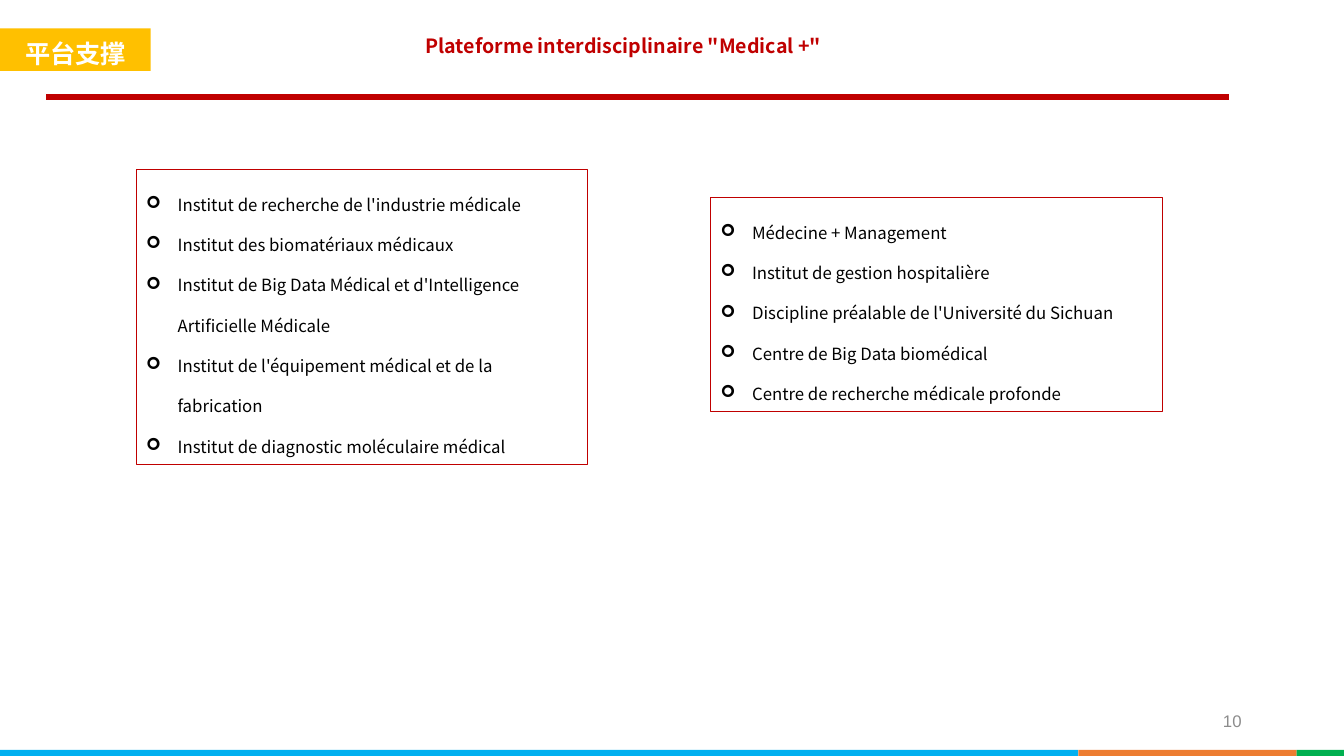
"""Build the slide on the "Medical +" interdisciplinary platform."""
from lxml import etree
from pptx import Presentation
from pptx.dml.color import RGBColor
from pptx.enum import shapes, text
from pptx.oxml.ns import qn
from pptx.util import Pt

SANS = "Noto Sans CJK SC"
RED = "C00000"


def paint(color_format, color):
    color_format.rgb = RGBColor.from_string(color)


def style(paragraph, size, color, bold=False, name=SANS):
    font = paragraph.font
    font.size, font.bold, font.name = Pt(size), bold, name
    paint(font.color, color)
    etree.SubElement(font._element, qn("a:ea"), typeface=name)


deck = Presentation()
deck.slide_width, deck.slide_height = Pt(960), Pt(540)
slide = deck.slides.add_slide(deck.slide_layouts[5])

title = slide.shapes.title
title.left, title.top, title.width, title.height = Pt(109.4), Pt(20.9), Pt(672), Pt(24.5)
title.text_frame.text = 'Plateforme interdisciplinaire "Medical +"'
title.text_frame.vertical_anchor = text.MSO_ANCHOR.TOP
title.text_frame.auto_size = text.MSO_AUTO_SIZE.SHAPE_TO_FIT_TEXT
heading = title.text_frame.paragraphs[0]
heading.alignment = text.PP_ALIGN.CENTER
style(heading, 14, RED, bold=True)

rule = slide.shapes.add_connector(
    shapes.MSO_CONNECTOR.STRAIGHT, Pt(33), Pt(69.2), Pt(878), Pt(69.2))
paint(rule.line.color, RED)
rule.line.width = Pt(4)
etree.SubElement(rule._element.spPr, qn("a:effectLst"))

FOOTER = [(0, 770.2, "00B0F0"), (770.2, 156, "ED7D31"), (926.2, 33.8, "00B050")]
for left, width, color in FOOTER:
    band = slide.shapes.add_shape(
        shapes.MSO_SHAPE.RECTANGLE, Pt(left), Pt(535.6), Pt(width), Pt(4.4))
    band.shadow.inherit = False
    band.fill.solid()
    paint(band.fill.fore_color, color)
    band.line.fill.background()

badge = slide.shapes.add_shape(
    shapes.MSO_SHAPE.RECTANGLE, 0, Pt(20.2), Pt(107.7), Pt(30.4))
badge.shadow.inherit = False
badge.fill.solid()
paint(badge.fill.fore_color, "FFC000")
badge.line.fill.background()
badge.text_frame.text = "平台支撑"
badge.text_frame.vertical_anchor = text.MSO_ANCHOR.TOP
badge.text_frame.auto_size = text.MSO_AUTO_SIZE.SHAPE_TO_FIT_TEXT
caption = badge.text_frame.paragraphs[0]
caption.alignment = text.PP_ALIGN.CENTER
caption.line_spacing = Pt(25)
style(caption, 18, "FFFFFF", bold=True)

INSTITUTES = [
    (97.3, 121, 210.8, [
        "Institut de recherche de l'industrie médicale",
        "Institut des biomatériaux médicaux",
        "Institut de Big Data Médical et d'Intelligence Artificielle Médicale",
        "Institut de l'équipement médical et de la fabrication",
        "Institut de diagnostic moléculaire médical",
    ]),
    (507.6, 141, 152.8, [
        "Médecine + Management",
        "Institut de gestion hospitalière",
        "Discipline préalable de l'Université du Sichuan",
        "Centre de Big Data biomédical",
        "Centre de recherche médicale profonde",
    ]),
]
for left, top, height, entries in INSTITUTES:
    panel = slide.shapes.add_shape(
        shapes.MSO_SHAPE.RECTANGLE, Pt(left), Pt(top), Pt(322.6), Pt(height))
    panel.shadow.inherit = False
    panel.fill.background()
    paint(panel.line.color, RED)
    panel.line.width = Pt(0.75)
    frame = panel.text_frame
    frame.text = "\n".join(entries)
    frame.vertical_anchor = text.MSO_ANCHOR.TOP
    frame.auto_size = text.MSO_AUTO_SIZE.SHAPE_TO_FIT_TEXT
    for entry in frame.paragraphs:
        entry.alignment = text.PP_ALIGN.LEFT
        entry.line_spacing = 2.0
        properties = entry._p.get_or_add_pPr()
        properties.set("marL", str(Pt(22.5)))
        properties.set("indent", str(-Pt(22.5)))
        etree.SubElement(properties, qn("a:buFont"), typeface="Wingdings")
        etree.SubElement(properties, qn("a:buChar"), char="➢")
        style(entry, 12, "000000")

page = slide.shapes.add_textbox(Pt(678), Pt(500.5), Pt(216), Pt(28.8))
page.text_frame.word_wrap = True
page.text_frame.vertical_anchor = text.MSO_ANCHOR.MIDDLE
page.text_frame.text = "10"
number = page.text_frame.paragraphs[0]
number.alignment = text.PP_ALIGN.RIGHT
style(number, 12, "8C8C8C", name="Arial")

deck.save("out.pptx")
